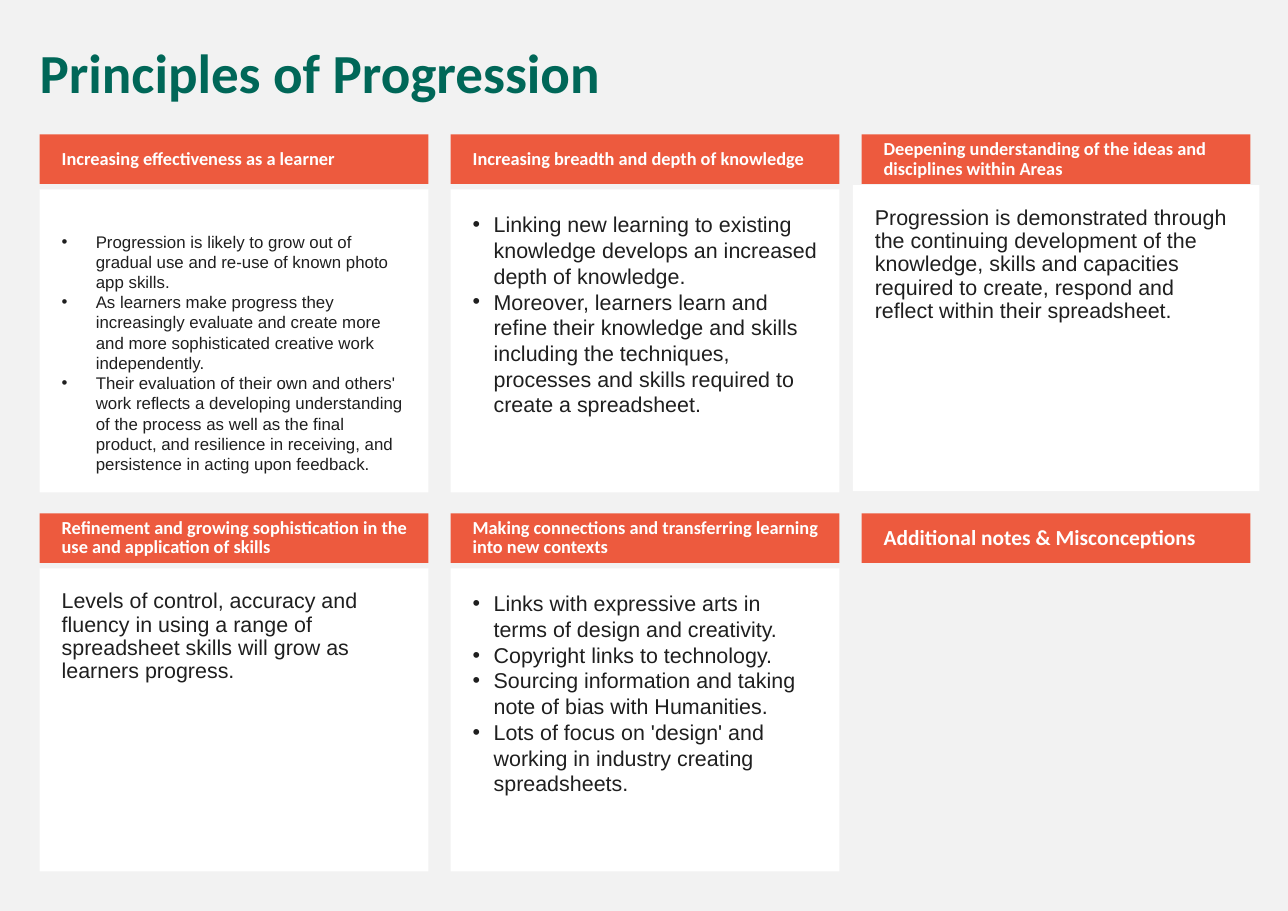
"""Build the Principles of Progression slide as a grid of headed panels."""
from lxml.etree import SubElement
from pptx import Presentation
from pptx.dml.color import RGBColor as RGB
from pptx.enum.shapes import MSO_SHAPE as SHAPE
from pptx.enum.text import MSO_ANCHOR as ANCHOR, MSO_AUTO_SIZE as AUTO, PP_ALIGN as ALIGN
from pptx.oxml.ns import qn
from pptx.util import Inches, Pt

COLOURS = {"page": "F2F2F2", "title": "006758", "header": "ED5A3E",
           "panel": "FFFFFF", "light": "FFFFFF", "dark": "1F1F1F"}
LEFT, TOP, COL_STEP, ROW_STEP = 0.36, 1.22, 3.73, 3.44
WIDTH, HEAD_H, PANEL_TOP, PANEL_H = 3.53, 0.45, 0.5, 2.75

CARDS = [
    dict(head="Increasing effectiveness as a learner", size=11, indent=0.31, inset_top=0.38, body=[
        "Progression is likely to grow out of gradual use and re-use of known photo app skills.",
        "As learners make progress they increasingly evaluate and create more and more "
        "sophisticated creative work independently.",
        "Their evaluation of their own and others' work reflects a developing understanding "
        "of the process as well as the final product, and resilience in receiving, "
        "and persistence in acting upon feedback."]),
    dict(head="Increasing breadth and depth of knowledge", indent=0.19, body=[
        "Linking new learning to existing knowledge develops an increased depth of knowledge.",
        "Moreover, learners learn and refine their knowledge and skills including "
        "the techniques, processes and skills required to create a spreadsheet."]),
    dict(head="Deepening understanding of the ideas and disciplines within Areas",
         box=(7.74, 1.68, 3.69, 2.78), body=[
        "Progression is demonstrated through the continuing development of the knowledge, "
        "skills and capacities required to create, respond and reflect within their spreadsheet."]),
    dict(head="Refinement and growing sophistication in the use and application of skills", body=[
        "Levels of control, accuracy and fluency in using a range of spreadsheet skills "
        "will grow as learners progress."]),
    dict(head="Making connections and transferring learning into new contexts", indent=0.19, body=[
        "Links with expressive arts in terms of design and creativity.",
        "Copyright links to technology.",
        "Sourcing information and taking note of bias with Humanities.",
        "Lots of focus on 'design' and working in industry creating spreadsheets."]),
    dict(head="Additional notes & Misconceptions", head_size=14),
]


class Board:
    """Hold the slide and its text styles, and draw each kind of element."""

    def __init__(self, prs):
        self.s = prs.slides.add_slide(prs.slide_layouts[5])
        self.fonts = {"title": dict(name="Calibri", bold=True, size=Pt(36)),
                      "header": dict(name="Calibri", bold=True),
                      "panel": dict(name="Arial", bold=False)}
        fill = self.s.background.fill
        fill.solid()
        fill.fore_color.rgb = RGB.from_string(COLOURS["page"])

    def frame(self, tf, anchor, insets):
        names = ("margin_left", "margin_top", "margin_right", "margin_bottom")
        values = dict(zip(names, map(Inches, insets)), word_wrap=True,
                      auto_size=AUTO.NONE, vertical_anchor=anchor)
        for name, value in values.items():
            setattr(tf, name, value)

    def add_text(self, p, text, kind, colour, spacing, **extra):
        p.alignment, p.line_spacing = ALIGN.LEFT, spacing
        r = p.add_run()
        r.text = text
        for name, value in {**self.fonts[kind], **extra}.items():
            setattr(r.font, name, value)
        r.font.color.rgb = RGB.from_string(COLOURS[colour])

    def title(self, text, box):
        sp = self.s.shapes.title
        for name, value in zip(("left", "top", "width", "height"), box):
            setattr(sp, name, Inches(value))
        self.frame(sp.text_frame, ANCHOR.MIDDLE, (0.1, 0.05, 0.1, 0.05))
        self.add_text(sp.text_frame.paragraphs[0], text, "title", "title", 0.9)

    def block(self, box, colour):
        sp = self.s.shapes.add_shape(SHAPE.RECTANGLE, *map(Inches, box))
        sp.shadow.inherit = False
        sp.fill.solid()
        sp.fill.fore_color.rgb = RGB.from_string(COLOURS[colour])
        sp.line.fill.background()
        return sp.text_frame

    def bullet(self, p, indent):
        pPr = p._p.get_or_add_pPr()
        pPr.set("marL", str(Inches(indent)))
        pPr.set("indent", str(-Inches(indent)))
        SubElement(pPr, qn("a:buFont")).set("typeface", "Arial")
        SubElement(pPr, qn("a:buChar")).set("char", "•")

    def header(self, box, text, size):
        tf = self.block(box, "header")
        self.frame(tf, ANCHOR.MIDDLE, (0.2, 0.05, 0.1, 0.05))
        self.add_text(tf.paragraphs[0], text, "header", "light", 0.9, size=Pt(size))

    def panel(self, box, texts, size, indent, inset_top):
        tf = self.block(box, "panel")
        self.frame(tf, ANCHOR.TOP, (0.2, inset_top, 0.2, 0.2))
        for i, text in enumerate(texts):
            p = tf.add_paragraph() if i else tf.paragraphs[0]
            self.add_text(p, text, "panel", "dark", 1.0 if indent else 0.9, size=Pt(size))
            if indent:
                self.bullet(p, indent)

    def card(self, col, row, head, body=(), box=None, size=14, head_size=12,
             indent=0, inset_top=0.2):
        x, y = LEFT + col * COL_STEP, TOP + row * ROW_STEP
        if body:
            self.panel(box or (x, y + PANEL_TOP, WIDTH, PANEL_H), body, size, indent, inset_top)
        self.header((x, y, WIDTH, HEAD_H), head, head_size)


def main():
    prs = Presentation()
    prs.slide_width, prs.slide_height = Inches(11.69), Inches(8.27)
    board = Board(prs)
    board.title("Principles of Progression", (0.26, 0.36, 11.08, 0.65))
    for i, card in enumerate(CARDS):
        board.card(i % 3, i // 3, **card)
    prs.save("out.pptx")


if __name__ == "__main__":
    main()
